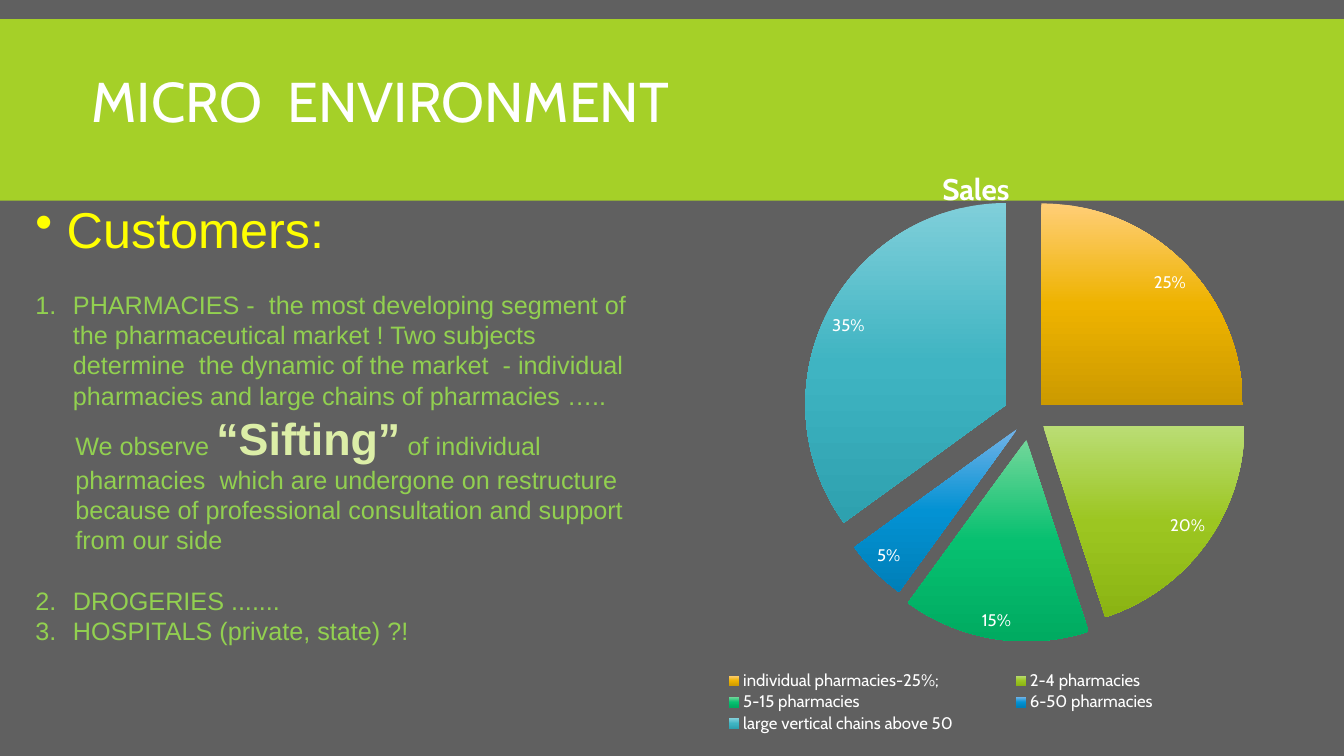
from copy import deepcopy

from pptx import Presentation
from pptx import util as u
from pptx.chart.data import CategoryChartData
from pptx.dml.color import RGBColor
from pptx.enum import chart as charts, shapes, text
from pptx.oxml import parse_xml
from pptx.oxml.ns import nsdecls, qn

GRAY = RGBColor(0x60, 0x60, 0x60)
LIME = RGBColor(0xA5, 0xD0, 0x28)
WHITE = RGBColor(0xFF, 0xFF, 0xFF)
YELLOW = RGBColor(0xFF, 0xFF, 0x00)
GREEN = RGBColor(0x92, 0xD0, 0x50)
PALE_LIME = RGBColor(0xDC, 0xEE, 0xA7)
SEGMENTS = [
    ("individual pharmacies-25%; ", 0.25, 8, ("FFCE77", "EEB300", "CC9A00")),
    ("2-4 pharmacies ", 0.2, 8, ("BADD75", "9CC621", "8BB413")),
    ("5-15 pharmacies ", 0.15, 12, ("72D79A", "07C070", "00AB61")),
    ("6-50 pharmacies ", 0.05, 9, ("72B3E8", "0392D3", "007FB8")),
    ("large vertical chains above 50", 0.35, 13, ("80CFDA", "3FB4C2", "2EA1AF")),
]


def style_font(font, size, color, name="Cabin", bold=False):
    font.size, font.name, font.bold = u.Pt(size), name, bold
    font.color.rgb = color


def add_text(paragraph, words, size=18, color=GREEN, name="Arial", bold=False, outline=None):
    run = paragraph.add_run()
    run.text = words
    style_font(run.font, size, color, name, bold)
    if outline is not None:
        run._r.get_or_add_rPr().insert(0, parse_xml(
            f'<a:ln {nsdecls("a")} w="{u.Pt(1.75)}"><a:solidFill>'
            f'<a:srgbClr val="{outline}"/></a:solidFill></a:ln>'))


def set_indent(paragraph, margin, hanging=0, marker=None):
    properties = paragraph._p.get_or_add_pPr()
    properties.set("marL", str(u.Cm(margin)))
    properties.set("indent", str(-u.Cm(hanging)))
    if marker:
        properties.append(parse_xml(f'<a:{marker} {nsdecls("a")}/>'))


def add_header(slide, left, top, width, height):
    band = slide.shapes.add_shape(shapes.MSO_SHAPE.RECTANGLE, left, top, width, height)
    band.shadow.inherit = False
    band.fill.solid()
    band.fill.fore_color.rgb = LIME
    band.line.fill.background()

    title = slide.shapes.title
    title.left, title.top = left + u.Cm(2.06), top + u.Cm(0.08)
    title.width, title.height = u.Cm(27.18), u.Cm(4.19)
    title.text_frame.vertical_anchor = text.MSO_ANCHOR.MIDDLE
    heading = title.text_frame.paragraphs[0]
    heading.alignment = text.PP_ALIGN.LEFT
    heading.line_spacing = 0.85
    add_text(heading, "MICRO  ENVIRONMENT", 40, WHITE, "Cabin")
    slide.shapes._spTree.append(title._element)


def add_customers(slide, left, top, width, height):
    frame = slide.shapes.add_textbox(left, top, width, height).text_frame
    frame.word_wrap = True

    def add_item(gap=0):
        item = frame.add_paragraph()
        item.space_before = u.Pt(gap)
        return item

    customers = frame.paragraphs[0]
    set_indent(customers, 0.79, 0.79, 'buChar char="•"')
    add_text(customers, "Customers:", 36, YELLOW)

    pharmacies = add_item(gap=21.6)
    set_indent(pharmacies, 0.95, 0.95, 'buAutoNum type="arabicPeriod"')
    add_text(pharmacies, "PHARMACIES -  the most developing segment of the pharmaceutical "
             "market ! Two subjects determine  the dynamic of the market  - individual "
             "pharmacies and large chains of pharmacies …..")

    sifting = add_item()
    set_indent(sifting, 1.01)
    add_text(sifting, "We observe ")
    add_text(sifting, "“Sifting”", 32, PALE_LIME, bold=True, outline=LIME)
    add_text(sifting, " of individual pharmacies  which are undergone on restructure "
             "because of professional consultation and support from our side")

    for words, gap in (("DROGERIES .......", 21.6), ("HOSPITALS (private, state) ?!", 0)):
        item = add_item(gap)
        set_indent(item, 0.95, 0.95, 'buAutoNum type="arabicPeriod" startAt="2"')
        add_text(item, words)


def set_layout(element, before, **values):
    for old in element.findall(qn("c:layout")):
        element.remove(old)
    parts = "".join(f'<c:{tag} val="{value}"/>' for tag, value in values.items())
    layout = parse_xml(f'<c:layout {nsdecls("c")}><c:manualLayout>{parts}'
                       '</c:manualLayout></c:layout>')
    element.find(qn(before)).addprevious(layout)


def explode_before(element, percent):
    element.addprevious(parse_xml(f'<c:explosion {nsdecls("c")} val="{percent}"/>'))


def fill_slice(point, colors):
    fill = point.format.fill
    fill.gradient()
    fill.gradient_angle = 270
    first = fill.gradient_stops[0]._gs
    first.addnext(deepcopy(first))
    for stop, position, color in zip(fill.gradient_stops, (0, 0.5, 1), colors):
        stop.position = position
        stop.color.rgb = RGBColor.from_string(color)


def add_sales_chart(slide, left, top, width, height):
    data = CategoryChartData(number_format="0%")
    data.categories = [name for name, *_ in SEGMENTS]
    data.add_series("Sales", [share for _, share, *_ in SEGMENTS])
    chart = slide.shapes.add_chart(
        charts.XL_CHART_TYPE.PIE, left, top, width, height, data).chart
    style_font(chart.font, 10, WHITE)

    chart.has_title = True
    add_text(chart.chart_title.text_frame.paragraphs[0], "Sales", 21.3, WHITE, "Cabin", True)
    chart.chart_title.include_in_layout = True
    set_layout(chart.chart_title._element, "c:overlay",
               xMode="edge", yMode="edge", x=0.44, y=0.03)

    chart.has_legend = True
    chart.legend.position = charts.XL_LEGEND_POSITION.BOTTOM
    chart.legend.include_in_layout = True
    style_font(chart.legend.font, 12, WHITE)
    set_layout(chart.legend._element, "c:overlay",
               xMode="edge", yMode="edge", x=0, y=0.88, w=0.9, h=0.11)

    pie = chart.plots[0]
    pie.vary_by_categories = True
    set_layout(chart._chartSpace.chart.plotArea, "c:pieChart", layoutTarget="inner",
               xMode="edge", yMode="edge", x=0.19, y=0.03, w=0.81, h=0.85)
    sales = pie.series[0]
    for index, (_, _, offset, colors) in enumerate(SEGMENTS):
        fill_slice(sales.points[index], colors)
        segment = sales._element.findall(qn("c:dPt"))[index]
        explode_before(segment.find(qn("c:spPr")), offset)
    explode_before(sales._element.find(qn("c:dPt")), 21)

    labels = sales.data_labels
    labels.show_value = True
    labels.number_format, labels.number_format_is_linked = "0%", False
    labels.position = charts.XL_LABEL_POSITION.BEST_FIT
    style_font(labels.font, 12, WHITE)


def main():
    deck = Presentation()
    deck.slide_width, deck.slide_height = u.Cm(33.87), u.Cm(19.05)
    slide = deck.slides.add_slide(deck.slide_layouts[5])
    slide.background.fill.solid()
    slide.background.fill.fore_color.rgb = GRAY
    add_header(slide, 0, u.Cm(0.48), deck.slide_width, u.Cm(4.58))
    add_customers(slide, u.Cm(0.64), u.Cm(4.88), u.Cm(16.1), u.Cm(11.63))
    add_sales_chart(slide, u.Cm(16.94), u.Cm(3.66), u.Cm(15.16), u.Cm(15.01))
    deck.save("out.pptx")


if __name__ == "__main__":
    main()
